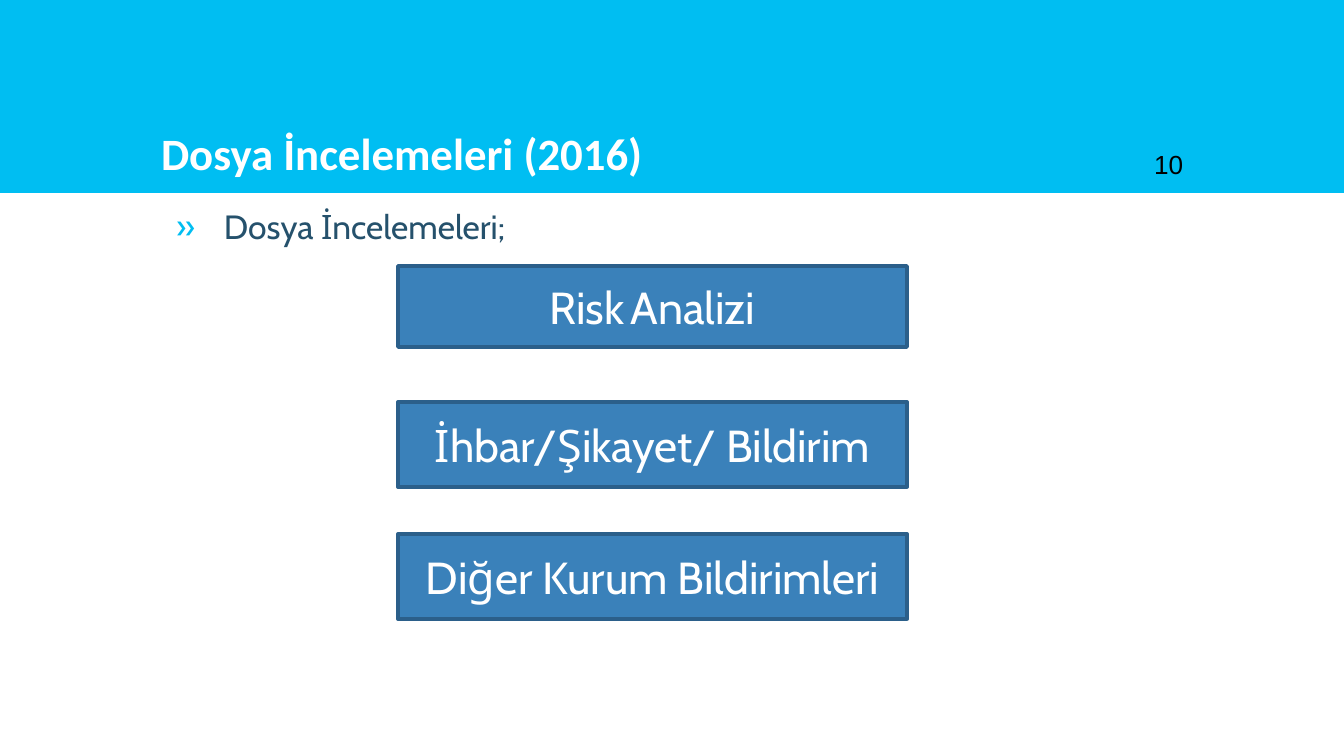
import pptx
import pptx.util
import pptx.dml.color
import pptx.enum.shapes
import pptx.enum.text
import pptx.oxml
import pptx.oxml.ns

PX = 914400 / 134.4
CYAN = pptx.dml.color.RGBColor(0x00, 0xBE, 0xF2)
BLUE = pptx.dml.color.RGBColor(0x3A, 0x81, 0xBA)
BORDER = pptx.dml.color.RGBColor(0x2B, 0x5F, 0x8A)
NAVY = pptx.dml.color.RGBColor(0x25, 0x51, 0x6C)
WHITE = pptx.dml.color.RGBColor(0xFF, 0xFF, 0xFF)
BLACK = pptx.dml.color.RGBColor(0x00, 0x00, 0x00)
ANCHOR = pptx.enum.text.MSO_ANCHOR
ALIGN = pptx.enum.text.PP_ALIGN
RECT = pptx.enum.shapes.MSO_SHAPE.RECTANGLE


def box(*lengths):
    return [round(n * PX) for n in lengths]


def write(sp, runs, font, color, anchor, align, inset=13, bold=False):
    tf = sp.text_frame
    tf.word_wrap = True
    tf.auto_size = pptx.enum.text.MSO_AUTO_SIZE.NONE
    tf.vertical_anchor = anchor
    tf.margin_left = tf.margin_right = tf.margin_top = tf.margin_bottom = box(inset)[0]
    p = tf.paragraphs[0]
    p.alignment = align
    for text, size in runs:
        r = p.add_run()
        r.text = text
        r.font.size = pptx.util.Pt(size)
        r.font.name = font
        r.font.bold = bold
        r.font.color.rgb = color
    return p


prs = pptx.Presentation()
prs.slide_width, prs.slide_height = box(1344, 756)
s = prs.slides.add_slide(prs.slide_layouts[5])

# Header band, placed behind the title
band = s.shapes.add_shape(RECT, *box(0, 0, 1344, 193))
band.shadow.inherit = False
band.fill.solid()
band.fill.fore_color.rgb = CYAN
band.line.fill.background()
s.shapes.title.element.addprevious(band.element)

# Title
title = s.shapes.title
title.left, title.top, title.width, title.height = box(148, 95, 1048, 98)
write(title, [("Dosya İncelemeleri (2016)", 24)], "Calibri", WHITE,
      ANCHOR.BOTTOM, ALIGN.LEFT, bold=True)

# Slide number
sp = s.shapes.add_textbox(*box(1141, 95, 81, 98))
write(sp, [("10", 14)], "Arial", BLACK, ANCHOR.BOTTOM, ALIGN.LEFT)

# Bulleted lead-in
sp = s.shapes.add_textbox(*box(148, 193, 1048, 461))
p = write(sp, [("Dosya İncelemeleri;", 18)], "Cabin", NAVY, ANCHOR.TOP, ALIGN.LEFT)
pPr = p._p.get_or_add_pPr()
pPr.set("marL", str(box(63)[0]))
pPr.set("indent", str(box(-48)[0]))
ns = pptx.oxml.ns.nsdecls("a")
for xml in (f'<a:buClr {ns}><a:srgbClr val="{CYAN}"/></a:buClr>',
            f'<a:buFont {ns} typeface="Cabin"/>',
            f'<a:buChar {ns} char="»"/>'):
    pPr.append(pptx.oxml.parse_xml(xml))

# Sources of the file reviews
sources = [
    (266, 81, [("Risk", 24), (" ", 14), ("Analizi", 24)]),
    (402, 85, [("İhbar/Şikayet/ Bildirim", 24)]),
    (534, 85, [("Diğer Kurum Bildirimleri", 24)]),
]
for top, height, runs in sources:
    sp = s.shapes.add_shape(RECT, *box(398, top, 509, height))
    sp.shadow.inherit = False
    sp.fill.solid()
    sp.fill.fore_color.rgb = BLUE
    sp.line.color.rgb = BORDER
    sp.line.width = pptx.util.Pt(2)
    write(sp, runs, "Cabin", WHITE, ANCHOR.MIDDLE, ALIGN.CENTER, inset=7)

prs.save("out.pptx")
